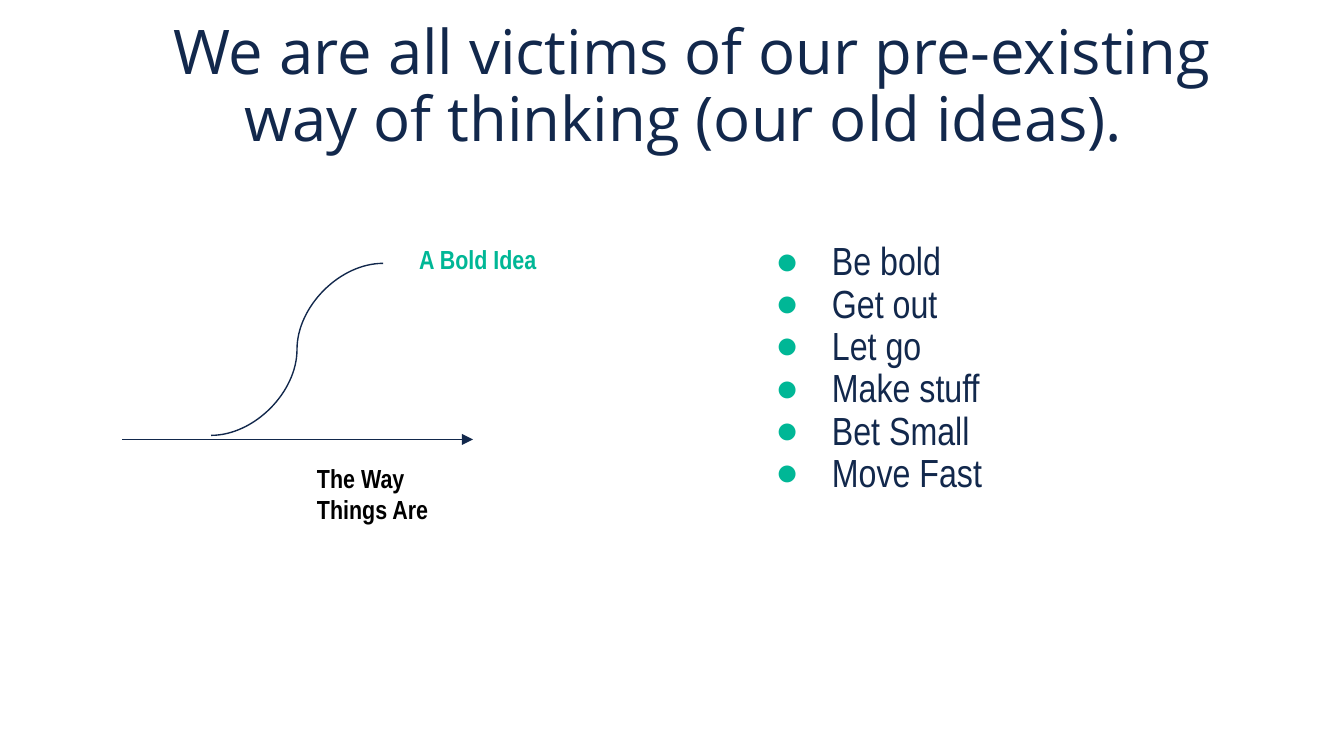
from typing import NamedTuple

from lxml import etree
from pptx import Presentation
from pptx.dml.color import RGBColor
from pptx.enum import shapes, text
from pptx.oxml import ns
from pptx.util import Inches, Pt

NAVY = RGBColor(0x12, 0x28, 0x4C)
GREEN = RGBColor(0x00, 0xB7, 0x96)
BLACK = RGBColor(0, 0, 0)
HEAD_FONT = "Open Sans"
TEXT_FONT = "Arial Narrow"

TITLE = "We are all victims of our pre-existing way of thinking (our old ideas). "
IDEAS = ["Be bold", "Get out", "Let go", "Make stuff", "Bet Small", "Move Fast"]


class Label(NamedTuple):
    words: str
    left: float
    top: float
    color: RGBColor


class Line(NamedTuple):
    kind: shapes.MSO_CONNECTOR
    start: tuple[float, float]
    end: tuple[float, float]
    arrow: bool


LABELS = [
    Label("The Way Things Are", 2.26, 3.34, BLACK),
    Label("A Bold Idea", 3.02, 1.71, GREEN),
]
LINES = [
    Line(shapes.MSO_CONNECTOR.STRAIGHT, (0.91, 3.27), (3.52, 3.27), True),
    Line(shapes.MSO_CONNECTOR.CURVE, (1.57, 3.24), (2.85, 1.96), False),
]


def place(shape, left: float, top: float, width: float, height: float) -> None:
    shape.left, shape.top = Inches(left), Inches(top)
    shape.width, shape.height = Inches(width), Inches(height)


def set_frame(frame, insets: tuple[float, ...], anchor) -> None:
    """Set wrapping, anchor and insets (left, top, right, bottom)."""
    frame.word_wrap = True
    frame.auto_size = text.MSO_AUTO_SIZE.NONE
    frame.vertical_anchor = anchor
    frame.margin_left, frame.margin_top, frame.margin_right, frame.margin_bottom = map(
        Inches, insets
    )


def add_run(para, words: str, font: str, size: float, color: RGBColor,
            bold: bool = False) -> None:
    run = para.add_run()
    run.text = words
    run.font.name = font
    run.font.size = Pt(size)
    run.font.bold = bold
    run.font.color.rgb = color


def add_bullet(para) -> None:
    props = para._p.get_or_add_pPr()
    props.set("marL", str(Inches(0.5)))
    props.set("indent", str(Inches(-0.42)))
    tint = etree.SubElement(props, ns.qn("a:buClr"))
    etree.SubElement(tint, ns.qn("a:srgbClr"), val=str(GREEN))
    etree.SubElement(props, ns.qn("a:buChar"), char="●")


def fill_title(shape) -> None:
    place(shape, 0.71, 0.41, 8.58, 0.74)
    set_frame(shape.text_frame, (0.4, 0.1, 0.1, 0), text.MSO_ANCHOR.BOTTOM)
    para = shape.text_frame.paragraphs[0]
    para.alignment = text.PP_ALIGN.CENTER
    para.line_spacing = 0.9
    add_run(para, TITLE, HEAD_FONT, 33, NAVY)


def fill_list(shape) -> None:
    place(shape, 5.29, 1.7, 4, 1.95)
    frame = shape.text_frame
    set_frame(frame, (0.4, 0.1, 0.4, 0.2), text.MSO_ANCHOR.TOP)
    for i, idea in enumerate(IDEAS):
        para = frame.add_paragraph() if i else frame.paragraphs[0]
        add_bullet(para)
        para.line_spacing = 0.9
        para.space_before = Pt(0)
        add_run(para, idea, TEXT_FONT, 21, NAVY)


def draw_line(slide, line: Line) -> None:
    ends = map(Inches, line.start + line.end)
    link = slide.shapes.add_connector(line.kind, *ends)
    link.line.color.rgb = NAVY
    link.line.width = Pt(0.75)
    if line.arrow:
        etree.SubElement(link.line._get_or_add_ln(), ns.qn("a:tailEnd"), type="triangle")
    etree.SubElement(link._element.spPr, ns.qn("a:effectLst"))


def draw_label(slide, label: Label) -> None:
    box = slide.shapes.add_textbox(
        Inches(label.left), Inches(label.top), Inches(1.28), Inches(0.52)
    )
    set_frame(box.text_frame, (0.1,) * 4, text.MSO_ANCHOR.TOP)
    add_run(box.text_frame.paragraphs[0], label.words, TEXT_FONT, 14, label.color, True)


def main() -> None:
    deck = Presentation()
    deck.slide_width = Inches(10)
    deck.slide_height = Inches(10 * 9 / 16)
    slide = deck.slides.add_slide(deck.slide_layouts[1])
    fill_title(slide.shapes.title)
    fill_list(slide.placeholders[1])
    for line in LINES:
        draw_line(slide, line)
    for label in LABELS:
        draw_label(slide, label)
    deck.save("out.pptx")


if __name__ == "__main__":
    main()
